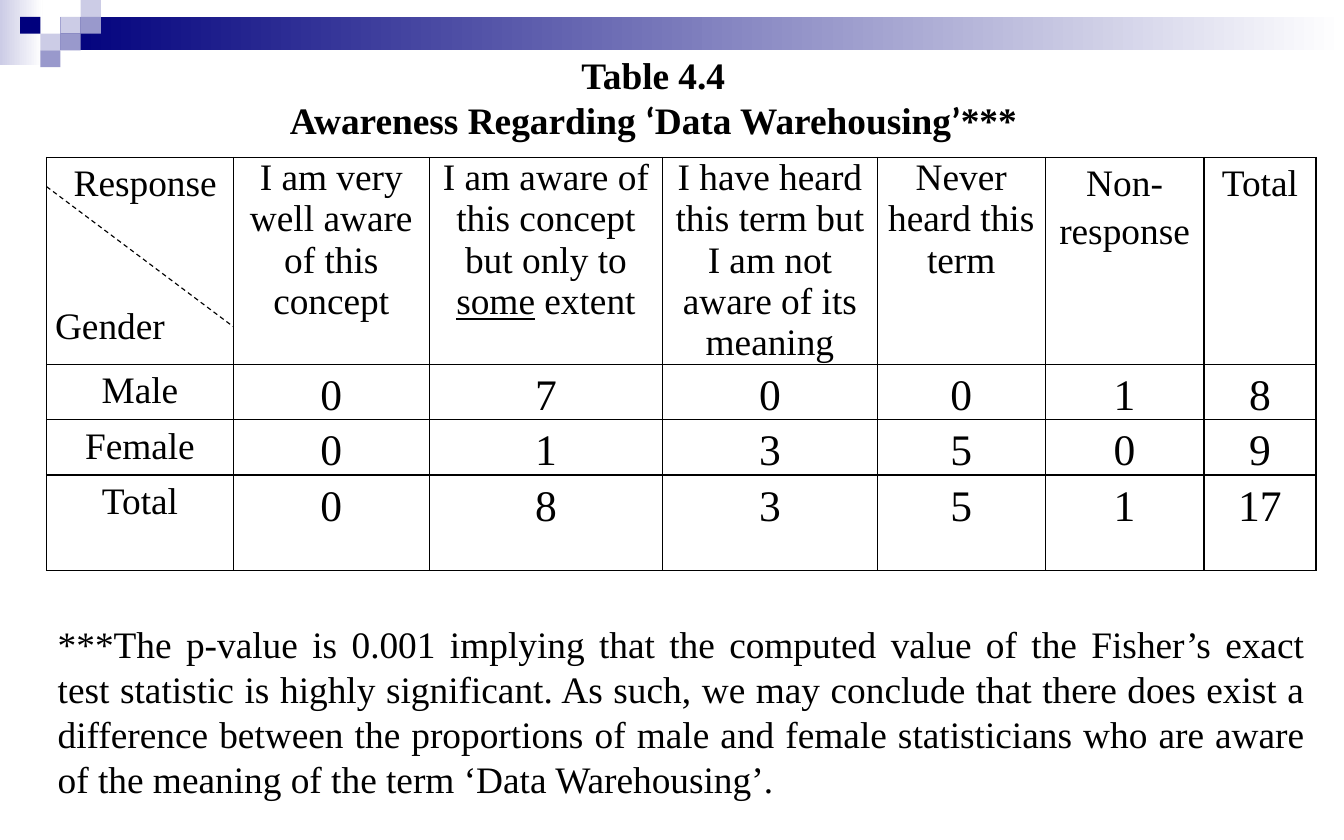
"""Builds the slide with the cross table on data warehousing awareness."""
from lxml.etree import SubElement as Sub
from pptx import Presentation
from pptx.dml.color import RGBColor
from pptx.enum.dml import MSO_LINE
from pptx.enum.shapes import MSO_CONNECTOR, MSO_SHAPE
from pptx.enum.text import PP_ALIGN as Align
from pptx.oxml.ns import qn
from pptx.util import Pt

BLACK = RGBColor(0x00, 0x00, 0x00)
WHITE = RGBColor(0xFF, 0xFF, 0xFF)
NAVY = RGBColor(0x00, 0x00, 0x7D)
LILAC = RGBColor(0xCC, 0xCC, 0xE6)
MAUVE = RGBColor(0x99, 0x99, 0xCC)
SERIF = "Times New Roman"


def write(para, text, size=24, align=Align.CENTER, space=None, before=0,
          bold=False, alt=SERIF, under=False):
    """Fills a paragraph; parts between bars take the alt font and underline."""
    para.alignment = align
    para.line_spacing = space
    para.space_before = Pt(before)
    for i, part in enumerate(text.split("|")):
        run = para.add_run()
        run.text = part
        font = run.font
        font.size, font.bold = Pt(size), bold
        font.color.rgb = BLACK
        font.name = alt if i % 2 else SERIF
        font.underline = under and i % 2 == 1


def block(left, top, width, height, *tones):
    """Draws a plain rectangle with one colour or a two-colour gradient."""
    rect = slide.shapes.add_shape(MSO_SHAPE.RECTANGLE, Pt(left), Pt(top), Pt(width), Pt(height))
    rect.shadow.inherit = False
    rect.line.fill.background()
    if len(tones) == 1:
        rect.fill.solid()
        rect.fill.fore_color.rgb = tones[0]
        return
    rect.fill.gradient()
    rect.fill.gradient_angle = 0
    for stop, tone in zip(rect.fill.gradient_stops, tones):
        stop.color.rgb = tone


deck = Presentation()
deck.slide_width, deck.slide_height = Pt(864), Pt(540)
slide = deck.slides.add_slide(deck.slide_layouts[6])

block(0, 0, 27.4, 41.8, LILAC, WHITE)
block(38.9, 10.8, 825.1, 21.6, NAVY, WHITE)
tiles = [(3, 1, LILAC), (4, 0, LILAC), (4, 1, MAUVE), (2, 2, LILAC),
         (1, 1, NAVY), (3, 2, MAUVE), (2, 3, MAUVE)]
for col, row, tone in tiles:
    block(col * 12.96, row * 10.8, 12.96, 10.8, tone)

heads = ["Response", "I am very well aware of this concept",
         "I am aware of this concept but only to |some| extent",
         "I have heard this term but I am not aware of its meaning",
         "Never heard this term", "Non-response", "Total"]
rows = [heads,
        ["Male", 0, 7, 0, 0, 1, 8],
        ["Female", 0, 1, 3, 5, 0, 9],
        ["Total", 0, 8, 3, 5, 1, 17]]
widths = [120, 126, 150, 138, 108, 102, 72]
heights = [133, 35.5, 35.5, 61.5]

table = slide.shapes.add_table(4, 7, Pt(30), Pt(101.2), Pt(sum(widths)), Pt(sum(heights))).table
table.first_row = table.horz_banding = False
for col, width in zip(table.columns, widths):
    col.width = Pt(width)
for row, height in zip(table.rows, heights):
    row.height = Pt(height)

for r, row in enumerate(rows):
    for c, text in enumerate(row):
        cell = table.cell(r, c)
        cell.margin_left = cell.margin_right = Pt(5.4)
        cell.margin_top = cell.margin_bottom = 0
        props = cell._tc.get_or_add_tcPr()
        for side in ("lnL", "lnR", "lnT", "lnB"):
            edge = Sub(props, qn("a:" + side), w=str(Pt(1)))
            Sub(Sub(edge, qn("a:solidFill")), qn("a:srgbClr"), val=str(BLACK))
        cell.fill.background()
        para = cell.text_frame.paragraphs[0]
        write(para, str(text), size=28 if r and c else 24,
              align=Align.CENTER if r or c else Align.LEFT,
              space=None if r == 0 and 0 < c < 5 else 1.15, under=True)

corner = table.cell(0, 0).text_frame
corner.paragraphs[0]._p.get_or_add_pPr().set("marL", str(Pt(12)))
write(corner.add_paragraph(), "Gender", align=Align.LEFT, space=1.15, before=61)

title = slide.shapes.add_textbox(Pt(126), Pt(30.2), Pt(588), Pt(66)).text_frame
title.word_wrap = True
write(title.paragraphs[0], "Table 4.4", bold=True)
write(title.add_paragraph(), "Awareness Regarding |‘|Data Warehousing|’|***",
      bold=True, alt="Calibri")

slash = slide.shapes.add_connector(MSO_CONNECTOR.STRAIGHT, Pt(30), Pt(120), Pt(150), Pt(210))
slash.line.color.rgb = BLACK
slash.line.width = Pt(0.75)
slash.line.dash_style = MSO_LINE.DASH
Sub(slash._element.spPr, qn("a:effectLst"))

note = slide.shapes.add_textbox(Pt(30), Pt(396), Pt(816), Pt(130)).text_frame
note.word_wrap = True
write(note.paragraphs[0],
      "***The p-value is 0.001 implying that the computed value of the Fisher’s exact test "
      "statistic is highly significant. As such, we may conclude that there does exist a "
      "difference between the proportions of male and female statisticians who are aware of "
      "the meaning of the term ‘Data Warehousing’.", align=Align.JUSTIFY)

deck.save("out.pptx")
